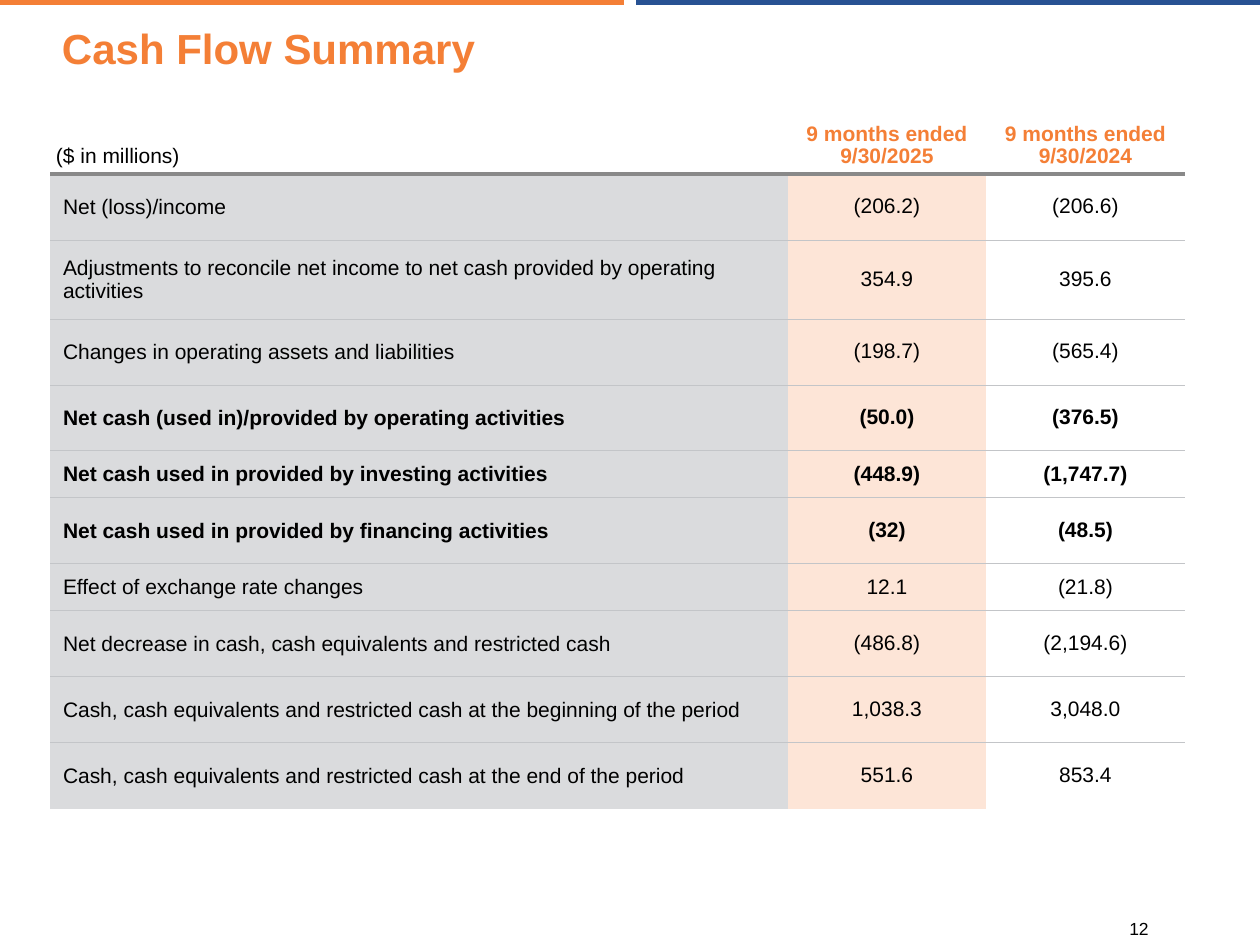
import pptx
import pptx.util
import pptx.dml.color
import pptx.enum.shapes
import pptx.enum.text
from lxml import etree

# Content
TITLE = "Cash Flow Summary"
PAGE = "12"
HEADER = ("($ in millions)", "9 months ended\n9/30/2025", "9 months ended\n9/30/2024")
HEADER_HEIGHT = 79
ROWS = [  # label, 2025, 2024, bold, height in px
    ("Net (loss)/income", "(206.2)", "(206.6)", False, 66),
    ("Adjustments to reconcile net income to net cash provided by operating activities",
     "354.9", "395.6", False, 79),
    ("Changes in operating assets and liabilities", "(198.7)", "(565.4)", False, 66),
    ("Net cash (used in)/provided by operating activities", "(50.0)", "(376.5)", True, 66),
    ("Net cash used in provided by investing activities", "(448.9)", "(1,747.7)", True, 47),
    ("Net cash used in provided by financing activities", "(32)", "(48.5)", True, 66),
    ("Effect of exchange rate changes", "12.1", "(21.8)", False, 47),
    ("Net decrease in cash, cash equivalents and restricted cash",
     "(486.8)", "(2,194.6)", False, 66),
    ("Cash, cash equivalents and restricted cash at the beginning of the period",
     "1,038.3", "3,048.0", False, 66),
    ("Cash, cash equivalents and restricted cash at the end of the period",
     "551.6", "853.4", False, 66),
]
COLUMNS = (738, 198, 199)
BARS = [(0, 624, "orange"), (636, 1260, "blue")]

THEME = {
    "font": "Arial",
    "color": {"orange": "F47F36", "blue": "285293", "text": "000000", "label": "DADBDD",
              "current": "FDE5D7", "rule": "C3C5C8", "head_rule": "898989"},
    "size": {"title": 24, "table": 12, "page": 10},
}
FILLS = ("label", "current", None)
ALIGN = pptx.enum.text.PP_ALIGN
ANCHOR = pptx.enum.text.MSO_ANCHOR
A = "http://schemas.openxmlformats.org/drawingml/2006/main"


def px(n):
    return pptx.util.Emu(round(n * 914400 / 126))


def rgb(name):
    return pptx.dml.color.RGBColor.from_string(THEME["color"][name])


def write(tf, text, size="table", color="text", bold=False, align=ALIGN.LEFT, spacing=1.0):
    for i, line in enumerate(text.split("\n")):
        p = tf.paragraphs[0] if i == 0 else tf.add_paragraph()
        p.alignment, p.line_spacing = align, spacing
        r = p.add_run()
        r.text = line
        r.font.name, r.font.size = THEME["font"], pptx.util.Pt(THEME["size"][size])
        r.font.bold, r.font.color.rgb = bold, rgb(color)


def text_box(s, box, text, anchor, **fmt):
    tf = s.shapes.add_textbox(*map(px, box)).text_frame
    tf.word_wrap, tf.vertical_anchor = True, anchor
    tf.margin_left = tf.margin_right = 0
    tf.margin_top = tf.margin_bottom = px(6) if anchor == ANCHOR.BOTTOM else 0
    write(tf, text, **fmt)


def set_borders(cell, top, bottom):
    """Each edge is (colour name, points) or None."""
    tcPr = cell._tc.get_or_add_tcPr()
    for i, (tag, edge) in enumerate((("lnL", None), ("lnR", None), ("lnT", top), ("lnB", bottom))):
        ln = etree.Element(f"{{{A}}}{tag}")
        if edge:
            ln.set("w", str(pptx.util.Pt(edge[1])))
            fill = etree.SubElement(ln, f"{{{A}}}solidFill")
            etree.SubElement(fill, f"{{{A}}}srgbClr", val=THEME["color"][edge[0]])
        else:
            ln.set("w", "0")
            etree.SubElement(ln, f"{{{A}}}noFill")
        tcPr.insert(i, ln)


def format_cell(cell, fill, margins, anchor):
    if fill:
        cell.fill.solid()
        cell.fill.fore_color.rgb = rgb(fill)
    else:
        cell.fill.background()
    cell.margin_left = cell.margin_right = px(margins[0])
    cell.margin_top = cell.margin_bottom = px(margins[1])
    cell.vertical_anchor = anchor


def add_bars(s):
    for x1, x2, color in BARS:
        c = s.shapes.add_connector(pptx.enum.shapes.MSO_CONNECTOR.STRAIGHT,
                                   px(x1), px(2), px(x2), px(2))
        c.line.color.rgb, c.line.width = rgb(color), pptx.util.Pt(3)
        etree.SubElement(c._element.spPr, f"{{{A}}}effectLst")


def add_cash_flow_table(s):
    heights = [HEADER_HEIGHT] + [row[-1] for row in ROWS]
    frame = s.shapes.add_table(len(heights), len(COLUMNS), px(50), px(95),
                               px(sum(COLUMNS)), px(sum(heights)))
    table = frame.table
    table.first_row = table.horz_banding = False
    for col, width in zip(table.columns, COLUMNS):
        col.width = px(width)
    for row, height in zip(table.rows, heights):
        row.height = px(height)
    rules = [None, ("head_rule", 2.25)] + [("rule", 0.5)] * (len(ROWS) - 1) + [None]

    for i, (*texts, bold, _) in enumerate([(*HEADER, True, HEADER_HEIGHT)] + ROWS):
        for j, text in enumerate(texts):
            cell = table.cell(i, j)
            head, label = i == 0, j == 0
            if head:
                format_cell(cell, None, (6, 6), ANCHOR.BOTTOM)
            else:
                format_cell(cell, FILLS[j], (13, 6) if label else (0, 0), ANCHOR.MIDDLE)
            set_borders(cell, rules[i], rules[i + 1])
            write(cell.text_frame, text,
                  color="orange" if head and not label else "text",
                  bold=bold and not (head and label),
                  align=ALIGN.LEFT if label else ALIGN.CENTER,
                  spacing=1.0 if label else 0.95)


def main():
    prs = pptx.Presentation()
    prs.slide_width, prs.slide_height = px(1260), px(945)
    s = prs.slides.add_slide(prs.slide_layouts[6])
    add_bars(s)
    text_box(s, (62, 26, 1136, 48), TITLE, ANCHOR.TOP,
             size="title", color="orange", bold=True, spacing=0.95)
    add_cash_flow_table(s)
    text_box(s, (1018, 896, 242, 49), PAGE, ANCHOR.BOTTOM, size="page", align=ALIGN.CENTER)
    prs.save("out.pptx")


if __name__ == "__main__":
    main()
